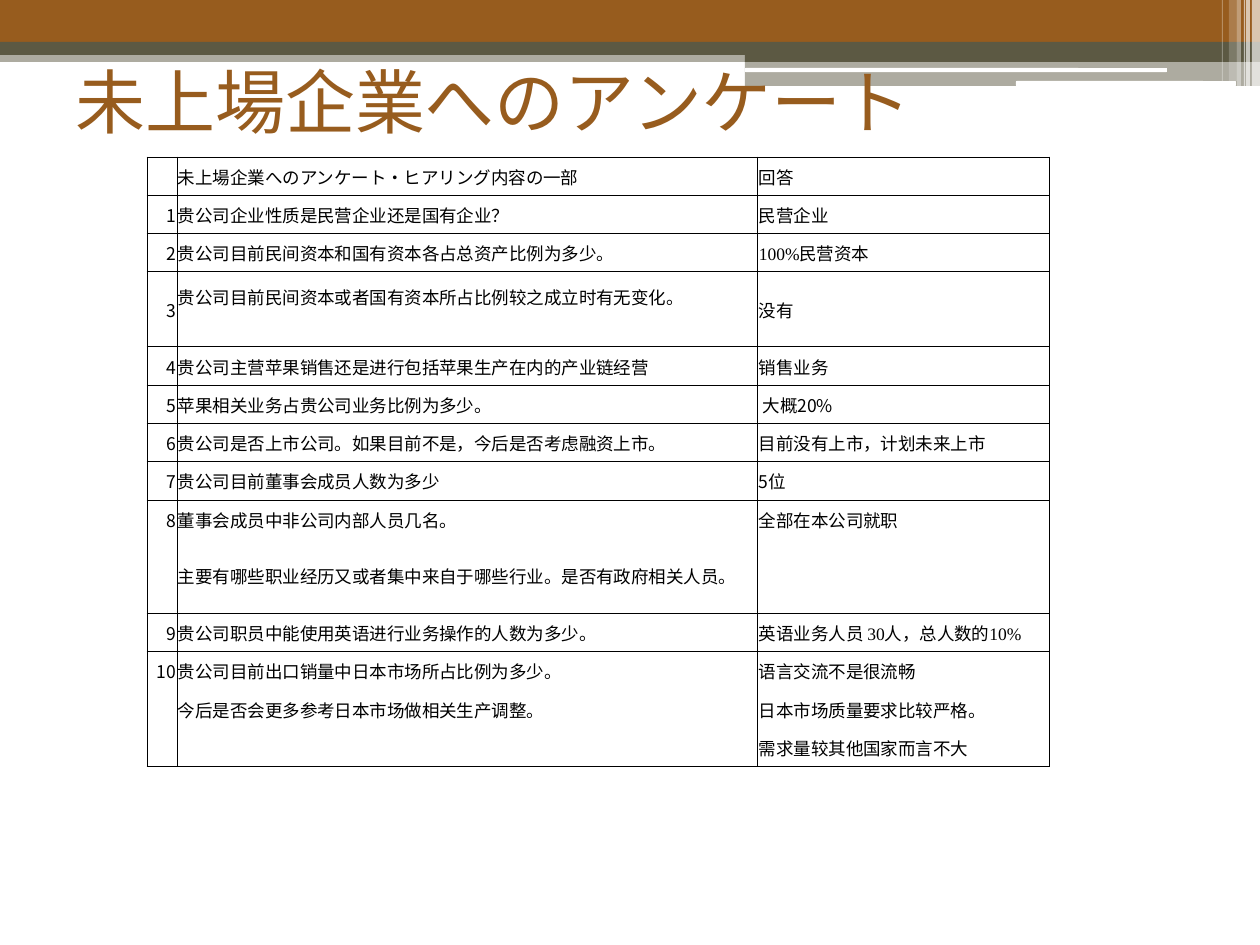
from lxml import etree
from pptx import Presentation, util as u
from pptx.dml.color import RGBColor
from pptx.enum import shapes, text
from pptx.oxml.ns import qn

PX = 914400 // 126
JP, SC, TIMES = "Noto Sans CJK JP", "Noto Sans CJK SC", "Times New Roman"
BROWN, OLIVE, WHITE, BLACK = "975C1E", "5C5943", "FFFFFF", "000000"

# left, top, width, height, colour, opacity in percent
BARS = [
    (0, 50, 1260, 12, OLIVE, 50),
    (0, 0, 1260, 42, BROWN, 100),
    (0, 42, 1260, 13, OLIVE, 100),
    (745, 49, 515, 13, OLIVE, 100),
    (745, 61, 515, 25, OLIVE, 50),
]
PILLS = [(745, 68, 422, 4, WHITE, 100), (1016, 81, 220, 5, WHITE, 100)]
# left, width, height, opacity
STRIPES = [(1252, 8, 86, 65), (1246, 4, 86, 65), (1244, 1, 86, 60),
           (1237, 4, 86, 40), (1229, 8, 81, 20), (1222, 1, 81, 30)]

TITLE = "未上場企業へのアンケート"
# A cell is a text in its column's font, or a list of (text, font) runs
FONTS = [JP, SC, JP]
ROWS = [
    ("", [("未上場企業へのアンケート・ヒアリング内容の一部", JP)], "回答"),
    ("1", "贵公司企业性质是民营企业还是国有企业？", [("民营企业", SC)]),
    ("2", "贵公司目前民间资本和国有资本各占总资产比例为多少。",
     [("100%", TIMES), ("民营资本", SC)]),
    ("3", "贵公司目前民间资本或者国有资本所占比例较之成立时有无变化。",
     [("没有", SC)]),
    ("4", "贵公司主营苹果销售还是进行包括苹果生产在内的产业链经营",
     [("销售业务", SC)]),
    ("5", "苹果相关业务占贵公司业务比例为多少。", " 大概20%"),
    ("6", "贵公司是否上市公司。如果目前不是，今后是否考虑融资上市。",
     "目前没有上市，计划未来上市"),
    ("7", "贵公司目前董事会成员人数为多少", "5位"),
    ("8", "董事会成员中非公司内部人员几名。", "全部在本公司就职"),
    ("", "主要有哪些职业经历又或者集中来自于哪些行业。是否有政府相关人员。", ""),
    ("9", "贵公司职员中能使用英语进行业务操作的人数为多少。",
     [("英语业务人员 ", SC), ("30", TIMES), ("人，总人数的", SC), ("10%", TIMES)]),
    ("10", [("贵公司目前出口销量中日本市场所占比例为多少。", JP)],
     [("语言交流不是很流畅", SC)]),
    ("", [("今后是否会更多参考日本市场做相关生产调整。", JP)],
     "日本市场质量要求比较严格。"),
    ("", "", "需求量较其他国家而言不大"),
]
WIDTHS = [30, 581, 292]
HEIGHT, TALL = 610, 75
TALLS = {3, 9}
JOINED = {9, 12, 13}  # rows with no line above them
RAISED = (3, 1)  # cell whose text sits above the middle


def rgb(code):
    return RGBColor.from_string(code)


def px(*vals):
    return [round(v * PX) for v in vals]


def bar(sl, kind, x, y, w, h, color, alpha):
    shp = sl.shapes.add_shape(kind, *px(x, y, w, h))
    shp.shadow.inherit = False
    shp.line.fill.background()
    shp.fill.solid()
    shp.fill.fore_color.rgb = rgb(color)
    if alpha < 100:
        clr = shp.fill._xPr.find(".//" + qn("a:srgbClr"))
        etree.SubElement(clr, qn("a:alpha"), val=str(alpha * 1000))


def write(par, words, font, size=10, color=BLACK, east=None):
    run = par.add_run()
    run.text = words
    run.font.size = u.Pt(size)
    run.font.name = font
    run.font.color.rgb = rgb(color)
    etree.SubElement(run._r.get_or_add_rPr(), qn("a:ea"),
                     typeface=east or font)
    # a:ea has to follow a:latin, which is the last child so far


def edge(cell, row):
    """Draw the cell's four borders, leaving out those between joined rows."""
    shown = {"L": True, "R": True, "T": row not in JOINED,
             "B": row + 1 not in JOINED}
    props = cell._tc.get_or_add_tcPr()
    for i, (side, on) in enumerate(shown.items()):
        ln = etree.Element(qn("a:ln" + side), w=str(u.Pt(0.5)))
        fill = etree.SubElement(ln, qn("a:solidFill" if on else "a:noFill"))
        if on:
            etree.SubElement(fill, qn("a:srgbClr"), val=BLACK)
        props.insert(i, ln)


def grid(sl):
    frame = sl.shapes.add_table(len(ROWS), len(WIDTHS),
                                *px(147, 157, sum(WIDTHS), HEIGHT))
    tab = frame.table
    tab.first_row = tab.horz_banding = False
    for col, wide in zip(tab.columns, WIDTHS):
        col.width = px(wide)[0]
    low = (HEIGHT - TALL * len(TALLS)) / (len(ROWS) - len(TALLS))
    for r, row in enumerate(ROWS):
        tab.rows[r].height = px(TALL if r in TALLS else low)[0]
        for c, item in enumerate(row):
            cell = tab.cell(r, c)
            cell.margin_left = cell.margin_right = cell.margin_top = PX
            cell.margin_bottom = px(25 if (r, c) == RAISED else 0)[0]
            cell.vertical_anchor = text.MSO_ANCHOR.MIDDLE
            cell.fill.background()
            edge(cell, r)
            par = cell.text_frame.paragraphs[0]
            if c == 0:
                par.alignment = text.PP_ALIGN.RIGHT
            if not item:  # keeps an empty cell from growing its row
                etree.SubElement(par._p, qn("a:endParaRPr"), sz="1000")
                continue
            runs = [(item, FONTS[c])] if isinstance(item, str) else item
            for words, font in runs:
                write(par, words, font)


def main():
    prs = Presentation()
    prs.slide_width, prs.slide_height = px(1260, 945)
    sl = prs.slides.add_slide(prs.slide_layouts[6])
    kind = shapes.MSO_SHAPE
    for item in BARS:
        bar(sl, kind.RECTANGLE, *item)
    for item in PILLS:
        bar(sl, kind.ROUNDED_RECTANGLE, *item)
    for x, w, h, alpha in STRIPES:
        bar(sl, kind.RECTANGLE, x, 0, w, h, WHITE, alpha)
    grid(sl)
    frame = sl.shapes.add_textbox(*px(63, 44, 998, 113)).text_frame
    frame.word_wrap = True
    frame.vertical_anchor = text.MSO_ANCHOR.MIDDLE
    write(frame.paragraphs[0], TITLE, "Karla", size=40, color=BROWN, east=JP)
    prs.save("out.pptx")


if __name__ == "__main__":
    main()
